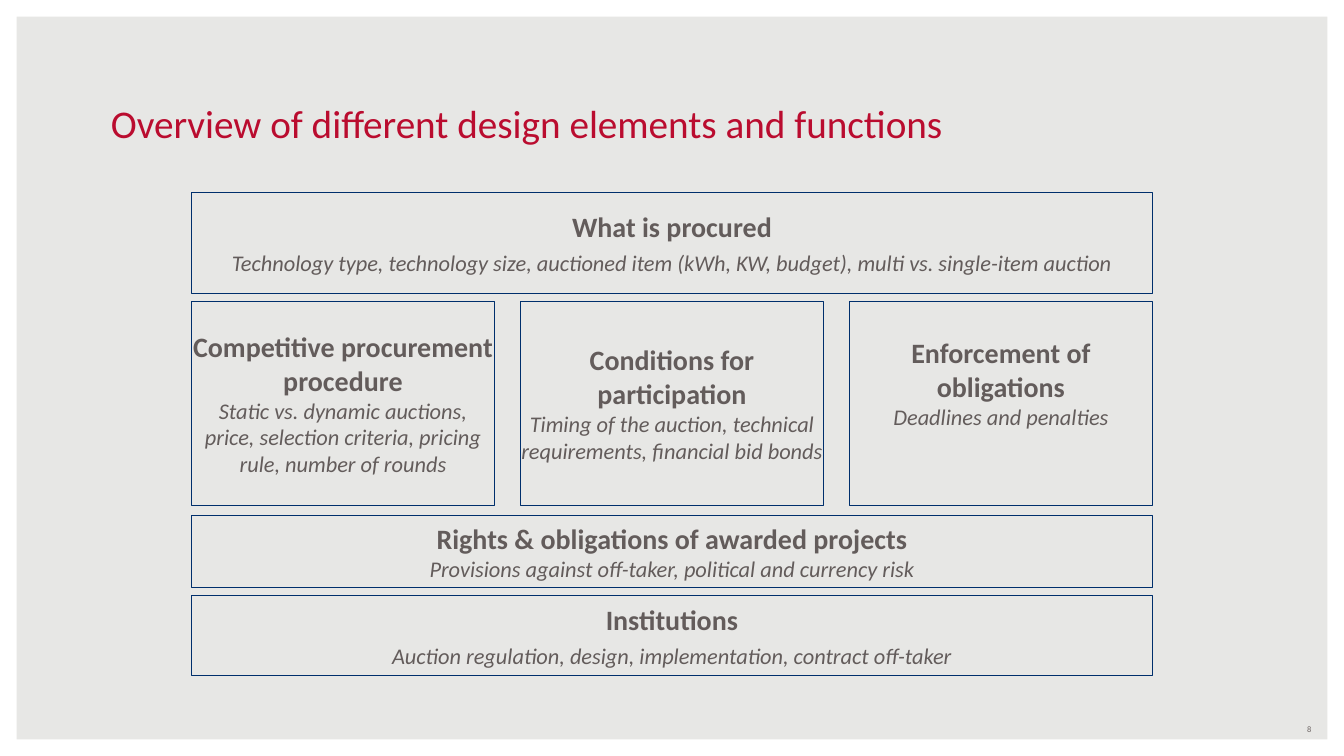
from pptx import Presentation
from pptx.dml import color
from pptx.enum import shapes, text
from pptx.util import Cm, Pt

FONT = "Calibri"
RED, NAVY, GREY, PALE = "BA0C2F", "002F6C", "635C5B", "E7E7E5"
LEFT, WIDTH = 4.83, 24.21
COL, COUNT = 7.63, 3
STEP = (WIDTH - COL) / (COUNT - 1)
HEAD = {"size": Pt(20), "bold": True}
BODY = {"size": Pt(16), "italic": True}

# top, height, heading, details, space after heading
BANDS = [
    (4.85, 2.54, "What is procured",
     "Technology type, technology size, auctioned item (kWh, KW, budget), "
     "multi vs. single-item auction", 4),
    (12.98, 1.83, "Rights & obligations of awarded projects",
     "Provisions against off-taker, political and currency risk", 0),
    (15.01, 2.01, "Institutions",
     "Auction regulation, design, implementation, contract off-taker", 4),
]
# heading, details, bottom inset
COLUMNS = [
    ("Competitive procurement\nprocedure",
     "Static vs. dynamic auctions, price, selection criteria, pricing rule, "
     "number of rounds", 0),
    ("Conditions for participation",
     "Timing of the auction, technical requirements, financial bid bonds", 0),
    ("Enforcement of obligations", "Deadlines and penalties", 1.03),
]


def rgb(code):
    return color.RGBColor.from_string(code)


def paint(fill, code):
    fill.solid()
    fill.fore_color.rgb = rgb(code)


def style(font, code, form):
    font.name = FONT
    font.color.rgb = rgb(code)
    for key, value in form.items():
        setattr(font, key, value)


def setup(frame, form):
    """Apply text frame settings such as anchor and margins."""
    for key, value in form.items():
        setattr(frame, key, value)


def place(shape, *box):
    for key, value in zip(("left", "top", "width", "height"), box):
        setattr(shape, key, Cm(value))


def add_title(slide, words):
    title = slide.shapes.title
    place(title, 2.54, 2.36, 28.78, 1.45)
    setup(title.text_frame, {"vertical_anchor": text.MSO_ANCHOR.BOTTOM,
                             "word_wrap": True})
    para = title.text_frame.paragraphs[0]
    para.text = words
    para.alignment = text.PP_ALIGN.LEFT
    style(para.font, RED, {"size": Pt(28), "bold": False})


def add_border(slide):
    border = slide.shapes.add_shape(shapes.MSO_SHAPE.FRAME, 0, 0,
                                    Cm(33.87), Cm(19.05))
    border.adjustments[0] = 0.022
    border.shadow.inherit = False
    paint(border.fill, "FFFFFF")
    border.line.fill.background()


def add_card(slide, box, head, body, after=0, inset=0):
    """Outlined box with a bold heading above italic details."""
    card = slide.shapes.add_shape(shapes.MSO_SHAPE.RECTANGLE,
                                  *(Cm(n) for n in box))
    card.shadow.inherit = False
    card.fill.background()
    card.line.color.rgb = rgb(NAVY)
    card.line.width = Pt(0.75)
    frame = card.text_frame
    setup(frame, {"word_wrap": True, "margin_left": 0, "margin_right": 0,
                  "margin_top": 0, "margin_bottom": Cm(inset),
                  "vertical_anchor": text.MSO_ANCHOR.MIDDLE})
    frame.text = head + "\n" + body
    *heads, last = frame.paragraphs
    for para in frame.paragraphs:
        para.alignment = text.PP_ALIGN.CENTER
    for para in heads:
        style(para.font, GREY, HEAD)
    heads[-1].space_after = Pt(after)
    style(last.font, GREY, BODY)


def add_number(slide, number):
    box = slide.shapes.add_textbox(Cm(25.4), Cm(18.11), Cm(7.9), Cm(0.51))
    setup(box.text_frame, {"word_wrap": True,
                           "vertical_anchor": text.MSO_ANCHOR.MIDDLE})
    para = box.text_frame.paragraphs[0]
    para.text = number
    para.alignment = text.PP_ALIGN.RIGHT
    style(para.font, "6C6463", {"size": Pt(6)})


def main():
    deck = Presentation()
    deck.slide_width, deck.slide_height = Cm(33.87), Cm(19.05)
    slide = deck.slides.add_slide(deck.slide_layouts[5])
    paint(slide.background.fill, PALE)
    add_border(slide)
    add_title(slide, "Overview of different design elements and functions")
    for top, height, head, body, after in BANDS:
        add_card(slide, (LEFT, top, WIDTH, height), head, body, after)
    for i, (head, body, inset) in enumerate(COLUMNS):
        add_card(slide, (LEFT + i * STEP, 7.6, COL, 5.13), head, body,
                 inset=inset)
    add_number(slide, "8")
    deck.save("out.pptx")


if __name__ == "__main__":
    main()
